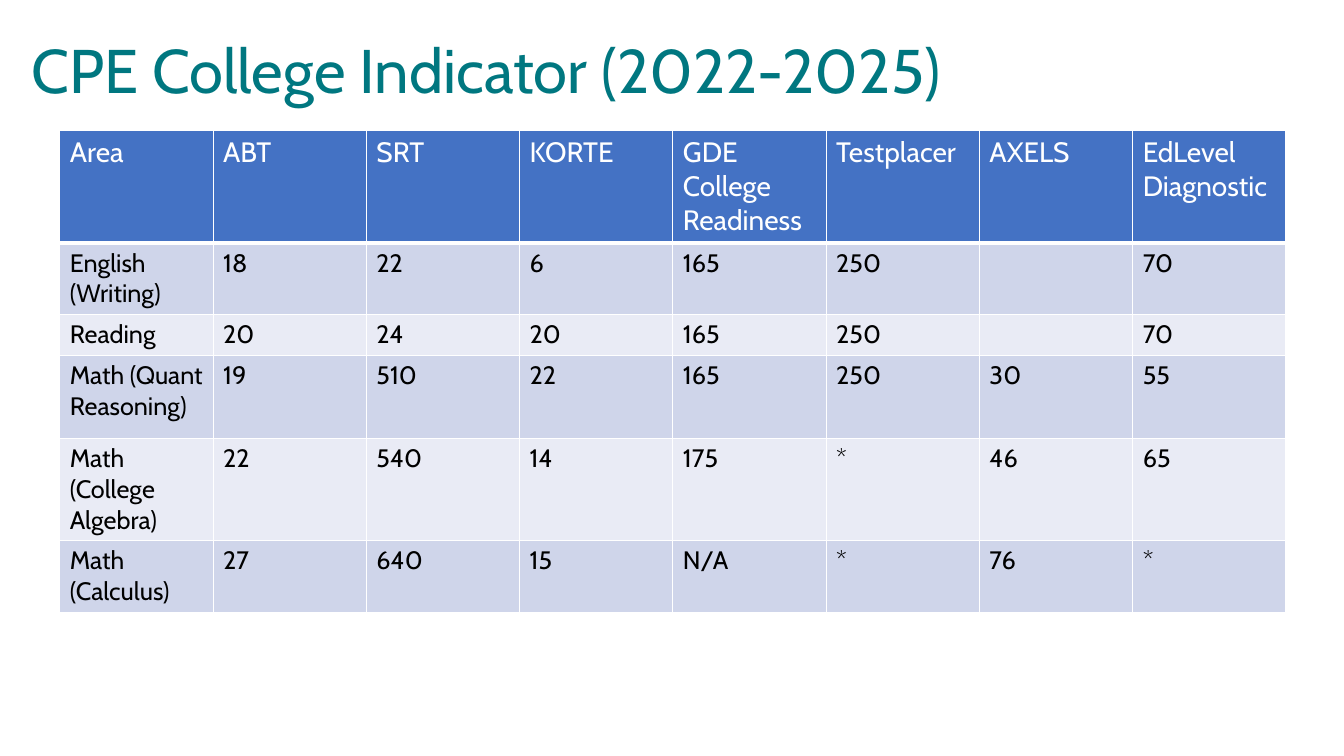
from dataclasses import dataclass

import pptx
import pptx.dml.color
import pptx.enum.text
import pptx.oxml
import pptx.oxml.ns
import pptx.util

PX = 9525
COLUMN_WIDTH = 146
ROW_HEIGHTS = [86, 56, 32, 79, 79, 56]
SCORES = [
    ["Area", "ABT", "SRT", "KORTE", "GDE College Readiness", "Testplacer", "AXELS", "EdLevel Diagnostic"],
    ["English (Writing)", "18", "22", "6", "165", "250", "", "70"],
    ["Reading", "20", "24", "20", "165", "250", "", "70"],
    ["Math (Quant Reasoning)", "19", "510", "22", "165", "250", "30", "55"],
    ["Math (College Algebra)", "22", "540", "14", "175", "*", "46", "65"],
    ["Math (Calculus)", "27", "640", "15", "N/A", "*", "76", "*"],
]


@dataclass(frozen=True)
class Theme:
    font: str = "Cabin"
    title: str = "007780"
    header: str = "4472C4"
    bands: tuple = ("E9EBF5", "CFD5EA")
    white: str = "FFFFFF"
    black: str = "000000"
    title_size: int = 44
    header_size: int = 20
    body_size: int = 18


THEME = Theme()


def px(n):
    return pptx.util.Emu(n * PX)


def rgb(color):
    return pptx.dml.color.RGBColor.from_string(color)


def set_attrs(obj, values):
    for name, value in values.items():
        setattr(obj, name, value)


def write_text(p, text, size, color):
    r = p.add_run()
    r.text = text
    set_attrs(r.font, {"name": THEME.font, "size": pptx.util.Pt(size), "bold": False})
    r.font.color.rgb = rgb(color)


def add_title(s, text):
    sp = s.shapes.title
    set_attrs(sp, {"left": px(20), "top": px(16), "width": px(1238), "height": px(108)})
    tf = sp.text_frame
    set_attrs(tf, {
        "word_wrap": True,
        "auto_size": pptx.enum.text.MSO_AUTO_SIZE.NONE,
        "vertical_anchor": pptx.enum.text.MSO_ANCHOR.MIDDLE,
    })
    p = tf.paragraphs[0]
    set_attrs(p, {"alignment": pptx.enum.text.PP_ALIGN.LEFT, "line_spacing": 0.9})
    write_text(p, text, THEME.title_size, THEME.title)


def add_borders(cell, bottom):
    tc_pr = cell._tc.get_or_add_tcPr()
    for side, points in {"L": 1, "R": 1, "T": 1, "B": bottom}.items():
        tc_pr.append(pptx.oxml.parse_xml(
            f'<a:ln{side} {pptx.oxml.ns.nsdecls("a")} w="{pptx.util.Pt(points)}">'
            f'<a:solidFill><a:srgbClr val="{THEME.white}"/></a:solidFill></a:ln{side}>'
        ))


def fill_cell(cell, text, row):
    is_header = row == 0
    add_borders(cell, 3 if is_header else 1)
    cell.fill.solid()
    cell.fill.fore_color.rgb = rgb(THEME.header if is_header else THEME.bands[row % 2])
    if text:
        size = THEME.header_size if is_header else THEME.body_size
        color = THEME.white if is_header else THEME.black
        write_text(cell.text_frame.paragraphs[0], text, size, color)


def add_score_table(s, rows):
    columns = len(rows[0])
    table = s.shapes.add_table(
        len(rows), columns, px(57), px(124), px(columns * COLUMN_WIDTH), px(sum(ROW_HEIGHTS))
    ).table
    for column in table.columns:
        column.width = px(COLUMN_WIDTH)
    for i, (height, texts) in enumerate(zip(ROW_HEIGHTS, rows)):
        table.rows[i].height = px(height)
        for j, text in enumerate(texts):
            fill_cell(table.cell(i, j), text, i)


def main():
    prs = pptx.Presentation()
    set_attrs(prs, {"slide_width": px(1280), "slide_height": px(720)})
    s = prs.slides.add_slide(prs.slide_layouts[5])
    add_title(s, "CPE College Indicator (2022-2025)")
    add_score_table(s, SCORES)
    prs.save("out.pptx")


if __name__ == "__main__":
    main()
